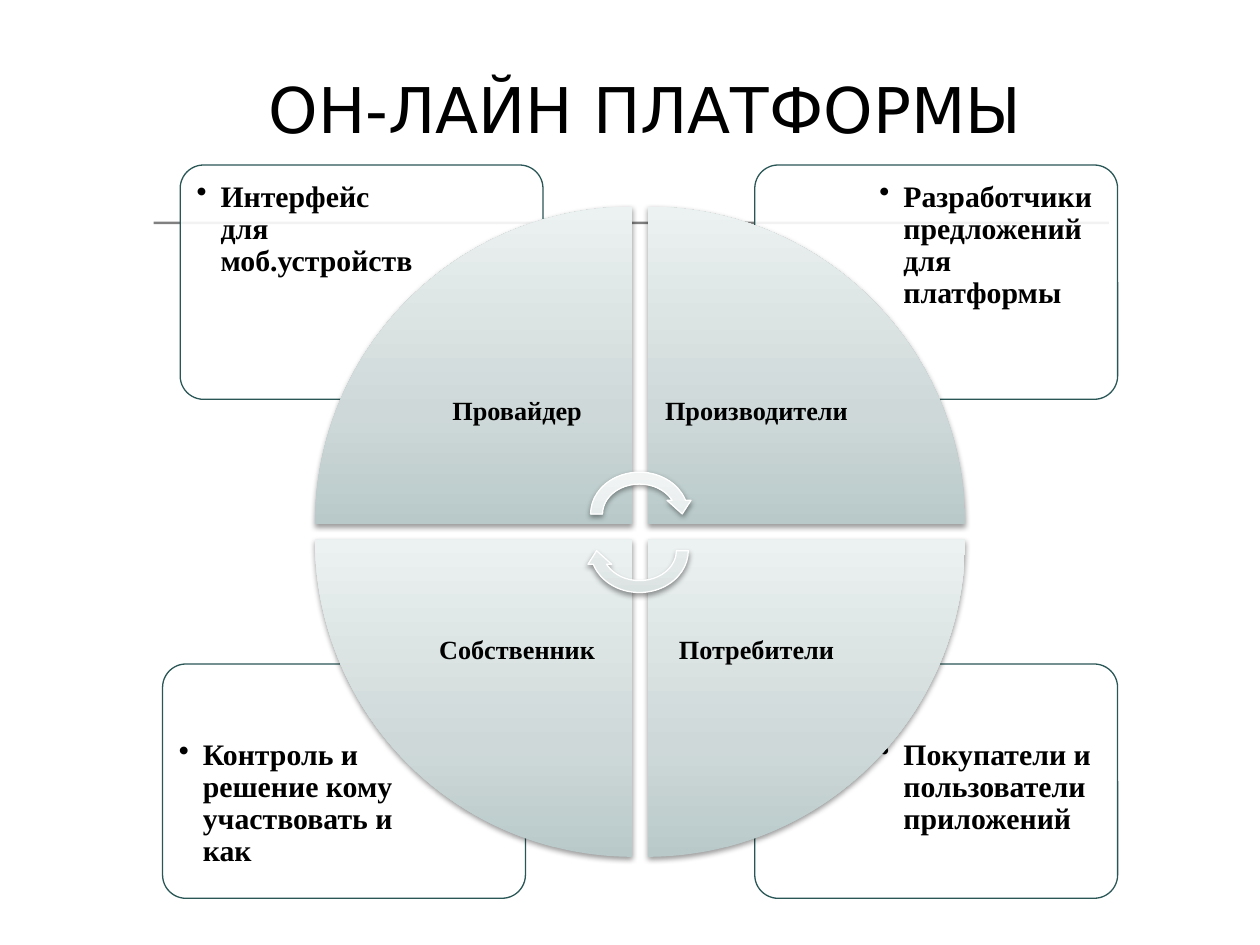
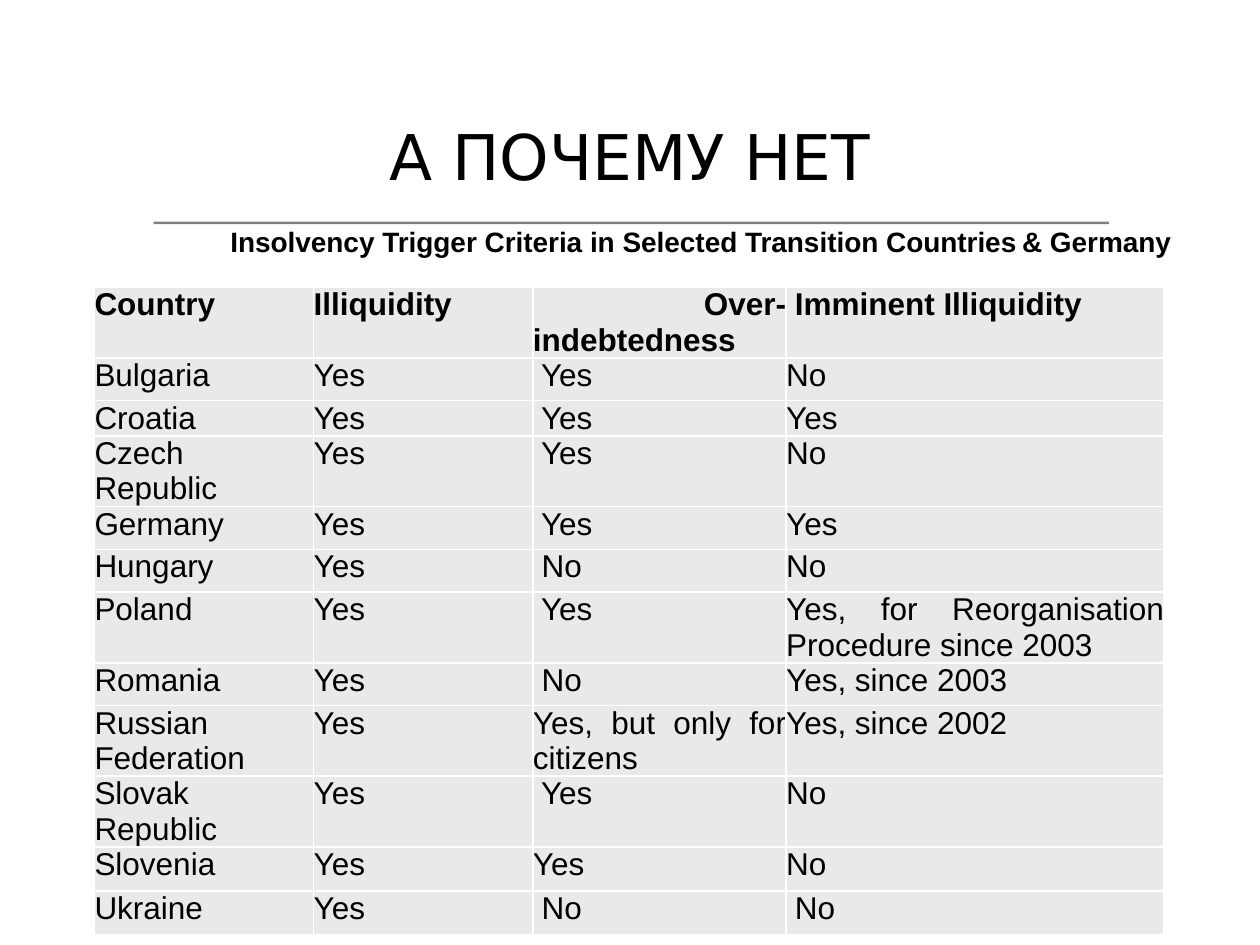
from lxml import etree
from pptx import Presentation
from pptx.dml.color import RGBColor
from pptx.enum.shapes import MSO_SHAPE
from pptx.enum.text import MSO_ANCHOR, MSO_AUTO_SIZE, PP_ALIGN
from pptx.oxml.ns import qn
from pptx.util import Inches, Pt

BLACK = RGBColor(0x00, 0x00, 0x00)
WHITE = RGBColor(0xFF, 0xFF, 0xFF)
RULE_GREY = RGBColor(0x80, 0x80, 0x80)
CARD_EDGE = RGBColor(0x2A, 0x56, 0x56)
CELL_GREY = RGBColor(0xE8, 0xEA, 0xEA)
WEDGE_SHADES = [(0, RGBColor(0xB9, 0xC9, 0xC9)), (35, RGBColor(0xCE, 0xD8, 0xD8)),
                (100, RGBColor(0xEC, 0xF1, 0xF1))]
ARROW_SHADES = [(0, RGBColor(0xD8, 0xE0, 0xE0)), (35, RGBColor(0xE3, 0xE9, 0xE9)),
                (100, RGBColor(0xF4, 0xF6, 0xF6))]

RECTANGLE = MSO_SHAPE.RECTANGLE
ROUNDED = MSO_SHAPE.ROUNDED_RECTANGLE
WEDGE = MSO_SHAPE.PIE_WEDGE
CIRCULAR_ARROW = MSO_SHAPE.CIRCULAR_ARROW
MIDDLE = MSO_ANCHOR.MIDDLE
TOP = MSO_ANCHOR.TOP
CENTER = PP_ALIGN.CENTER
LEFT = PP_ALIGN.LEFT
JUSTIFY = PP_ALIGN.JUSTIFY
GROW = MSO_AUTO_SIZE.SHAPE_TO_FIT_TEXT

TITLE_FONT = "DejaVu Sans"
DIAGRAM_FONT = "Times New Roman"
TABLE_FONT = "Arial"
TITLE_ONLY = 5

WEDGE_SIZE = 2.52
LABEL_SIZE = 1.78
WEDGE_LEFTS = (2.5, 5.14)
WEDGE_TOPS = (1.64, 4.28)
LABEL_LEFTS = (3.24, 5.14)
LABEL_TOPS = (2.38, 4.28)
CARD_TOPS = (1.31, 5.27)
NOTE_SHIFT_X = (0.04, 0.9)
NOTE_SHIFT_Y = (0.04, 0.51)

# column, row, wedge rotation, card left, wedge label, card note
QUADRANTS = [
    (0, 0, 0, 1.43, "Провайдер ", "Интерфейс для моб.устройств"),
    (1, 0, 90, 5.99, "Производители ", "Разработчики предложений для платформы"),
    (1, 1, 180, 5.99, "Потребители ", "Покупатели и пользователи приложений"),
    (0, 1, 270, 1.29, "Собственник ", "Контроль и решение кому участвовать и как"),
]

COLUMN_WIDTHS = (1.74, 1.74, 2.01, 3)
ROW_HEIGHTS = (0.36, 0.34, 0.23, 0.34, 0.34, 0.34, 0.53, 0.34, 0.53, 0.35, 0.35, 0.35)
CRITERIA = [
    ("Country", "Illiquidity", " Over-indebtedness", " Imminent Illiquidity"),
    ("Bulgaria", "Yes", " Yes", "No"),
    ("Croatia", "Yes", " Yes", "Yes"),
    ("Czech Republic", "Yes", " Yes", "No"),
    ("Germany", "Yes", " Yes", "Yes"),
    ("Hungary", "Yes", " No", "No"),
    ("Poland", "Yes", " Yes", "Yes, for Reorganisation Procedure since 2003"),
    ("Romania", "Yes", " No", "Yes, since 2003"),
    ("Russian\nFederation", "Yes", "Yes, but only for citizens ", "Yes, since 2002"),
    ("Slovak Republic", "Yes", " Yes", "No"),
    ("Slovenia", "Yes", "Yes", "No"),
    ("Ukraine", "Yes", " No", " No"),
]


def set_font(font, name, size, bold=False):
    font.name = name
    font.size = Pt(size)
    font.bold = bold
    font.color.rgb = BLACK


def set_insets(holder, inset):
    holder.margin_left = holder.margin_right = Inches(inset)
    holder.margin_top = holder.margin_bottom = Inches(inset)


def add_color(parent, color, alpha=None):
    element = etree.SubElement(parent, qn("a:srgbClr"), val=str(color))
    if alpha is not None:
        etree.SubElement(element, qn("a:alpha"), val=str(alpha * 1000))


def add_titled_slide(prs, title, left, top):
    slide = prs.slides.add_slide(prs.slide_layouts[TITLE_ONLY])
    heading = slide.shapes.title
    heading.left, heading.top = Inches(left), Inches(top)
    heading.width, heading.height = Inches(10), Inches(1)
    heading.text_frame.text = title
    heading.text_frame.vertical_anchor = MIDDLE
    paragraph = heading.text_frame.paragraphs[0]
    paragraph.alignment = CENTER
    set_font(paragraph.font, TITLE_FONT, 36)
    rule = add_plain_shape(slide, RECTANGLE, 1.22, 1.76, 7.58, 0.02)
    rule.fill.solid()
    rule.fill.fore_color.rgb = RULE_GREY
    return slide


def add_plain_shape(slide, kind, left, top, width, height):
    shape = slide.shapes.add_shape(kind, Inches(left), Inches(top), Inches(width), Inches(height))
    shape.shadow.inherit = False
    shape.line.fill.background()
    return shape


def set_outline(shape, color):
    shape.line.color.rgb = color
    shape.line.width = Pt(0.75)


def add_shaded_shape(slide, kind, left, top, width, height, rotation, shades):
    shape = add_plain_shape(slide, kind, left, top, width, height)
    shape.rotation = rotation
    shape.fill.gradient()
    shape.fill.gradient_angle = 90
    properties = shape._element.spPr
    gradient = properties.find(qn("a:gradFill"))
    gradient.set("rotWithShape", "0")
    stops = gradient.find(qn("a:gsLst"))
    for stop in list(stops):
        stops.remove(stop)
    for position, color in shades:
        add_color(etree.SubElement(stops, qn("a:gs"), pos=str(position * 1000)), color)
    shadow = etree.SubElement(properties.find(qn("a:effectLst")), qn("a:outerShdw"),
                              blurRad=str(Pt(3.1)), dist=str(Pt(1.6)), dir="5400000",
                              rotWithShape="0")
    add_color(shadow, BLACK, 38)
    return shape


def add_diagram_text(slide, left, top, width, height, text, size, inset, anchor, alignment):
    box = slide.shapes.add_textbox(Inches(left), Inches(top), Inches(width), Inches(height))
    frame = box.text_frame
    frame.word_wrap = True
    frame.vertical_anchor = anchor
    set_insets(frame, inset)
    frame.text = text
    paragraph = frame.paragraphs[0]
    paragraph.alignment = alignment
    paragraph.line_spacing = 0.9
    set_font(paragraph.font, DIAGRAM_FONT, size, True)
    return paragraph


def add_bullet(paragraph):
    properties = paragraph._p.get_or_add_pPr()
    properties.set("marL", str(Inches(0.19)))
    properties.set("indent", str(-Inches(0.19)))
    bullet = etree.Element(qn("a:buChar"), char="•")
    properties.find(qn("a:defRPr")).addprevious(bullet)


def add_card(slide, column, row, left, note):
    top = CARD_TOPS[row]
    card = add_plain_shape(slide, ROUNDED, left, top, 2.88, 1.86)
    card.adjustments[0] = 0.1
    card.fill.solid()
    card.fill.fore_color.rgb = WHITE
    fill_color = card._element.spPr.find(qn("a:solidFill"))[0]
    etree.SubElement(fill_color, qn("a:alpha"), val="90000")
    set_outline(card, CARD_EDGE)
    paragraph = add_diagram_text(slide, left + NOTE_SHIFT_X[column], top + NOTE_SHIFT_Y[row],
                                 1.93, 1.32, note, 17, 0.09, TOP, LEFT)
    add_bullet(paragraph)


def add_wedge(slide, column, row, rotation, label):
    add_shaded_shape(slide, WEDGE, WEDGE_LEFTS[column], WEDGE_TOPS[row],
                     WEDGE_SIZE, WEDGE_SIZE, rotation, WEDGE_SHADES)
    add_diagram_text(slide, LABEL_LEFTS[column], LABEL_TOPS[row], LABEL_SIZE, LABEL_SIZE,
                     label, 15, 0.12, MIDDLE, CENTER)


def set_borders(cell):
    properties = cell._tc.get_or_add_tcPr()
    for index, side in enumerate(("a:lnL", "a:lnR", "a:lnT", "a:lnB")):
        border = etree.Element(qn(side), w=str(Pt(1)))
        add_color(etree.SubElement(border, qn("a:solidFill")), WHITE)
        properties.insert(index, border)


def fill_cell(cell, text, bold):
    cell.text = text
    set_insets(cell, 0)
    cell.fill.solid()
    cell.fill.fore_color.rgb = CELL_GREY
    set_borders(cell)
    for paragraph in cell.text_frame.paragraphs:
        paragraph.alignment = LEFT if "\n" in text else JUSTIFY
        set_font(paragraph.font, TABLE_FONT, 18, bold)


def add_criteria_table(slide):
    table = slide.shapes.add_table(len(CRITERIA), len(COLUMN_WIDTHS), Inches(0.75), Inches(2.28),
                                   Inches(8.5), Inches(4.86)).table
    table.first_row = table.horz_banding = False
    for column, width in zip(table.columns, COLUMN_WIDTHS):
        column.width = Inches(width)
    for index, (height, texts) in enumerate(zip(ROW_HEIGHTS, CRITERIA)):
        table.rows[index].height = Inches(height)
        for cell, text in zip(table.rows[index].cells, texts):
            fill_cell(cell, text, index == 0)


def add_table_caption(slide):
    caption = slide.shapes.add_textbox(Inches(1.73), Inches(1.73), Inches(7.76), Inches(0.32))
    frame = caption.text_frame
    frame.word_wrap = False
    frame.auto_size = GROW
    frame.vertical_anchor = MIDDLE
    frame.margin_bottom = 0
    parts = [("Insolvency Trigger Criteria in Selected Transition Countries", 16),
             (" ", 10), ("& Germany", 16)]
    for text, size in parts:
        run = frame.paragraphs[0].add_run()
        run.text = text
        set_font(run.font, TABLE_FONT, size, True)


def build_platforms(prs):
    slide = add_titled_slide(prs, "ОН-ЛАЙН ПЛАТФОРМЫ", 0.12, 0.36)
    for column, row, _, card_left, _, note in QUADRANTS:
        add_card(slide, column, row, card_left, note)
    for column, row, rotation, _, label, _ in QUADRANTS:
        add_wedge(slide, column, row, rotation, label)
    for top, rotation in ((3.7, 0), (3.99, 180)):
        arrow = add_shaded_shape(slide, CIRCULAR_ARROW, 4.64, top, 0.87, 0.76,
                                 rotation, ARROW_SHADES)
        set_outline(arrow, WHITE)


def build_criteria(prs):
    slide = add_titled_slide(prs, "А ПОЧЕМУ НЕТ", 0, 0.73)
    add_criteria_table(slide)
    add_table_caption(slide)


def main():
    prs = Presentation()
    prs.slide_width, prs.slide_height = Inches(10), Inches(7.5)
    build_platforms(prs)
    build_criteria(prs)
    prs.save("out.pptx")


if __name__ == "__main__":
    main()
